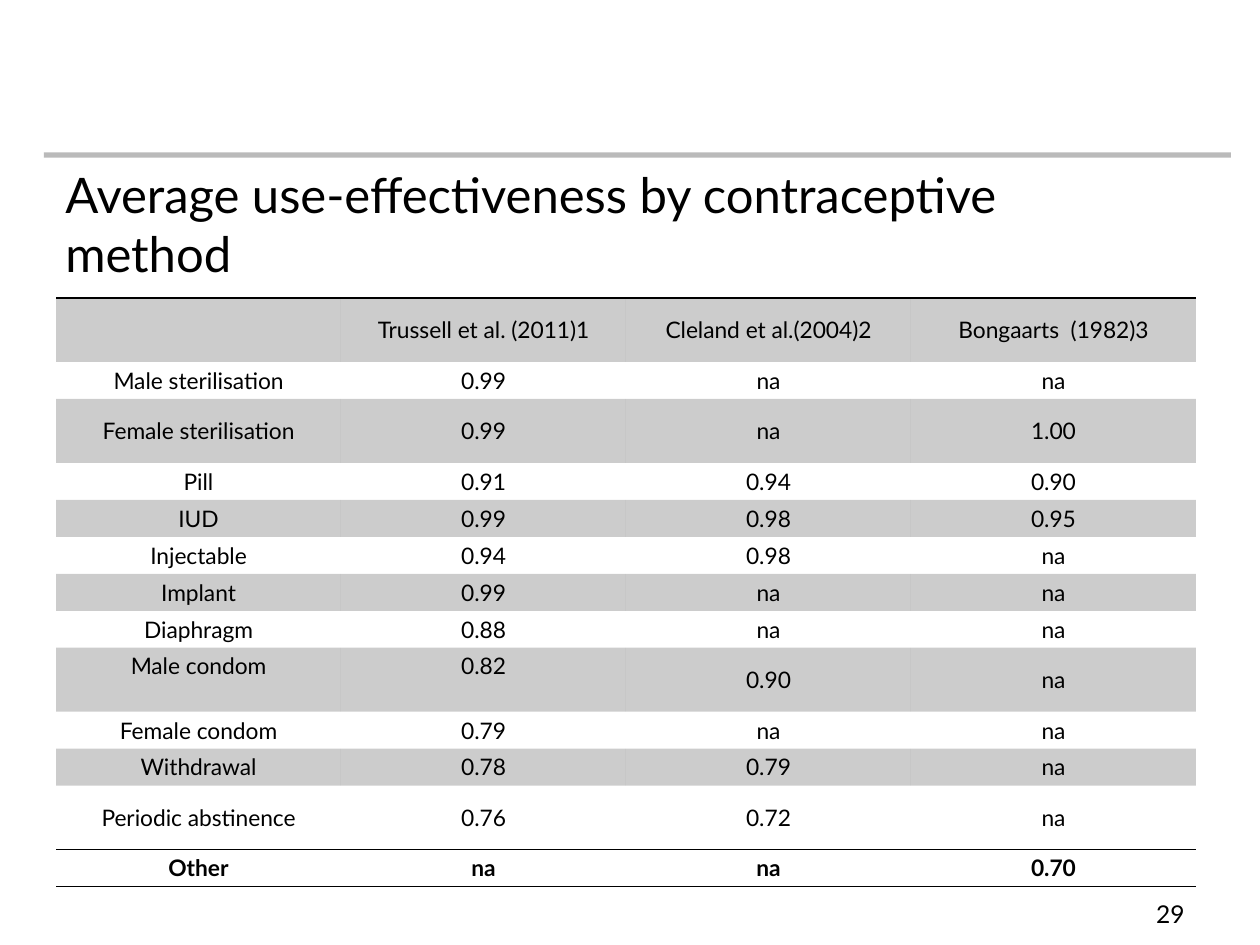
from lxml.etree import SubElement
from pptx import Presentation
from pptx.dml.color import RGBColor
from pptx.enum.shapes import MSO_CONNECTOR as Link
from pptx.enum.text import MSO_ANCHOR as Anchor, PP_ALIGN as Align
from pptx.oxml import parse_xml
from pptx.oxml.ns import nsdecls, qn
from pptx.util import Emu, Pt

BLACK = RGBColor(0x00, 0x00, 0x00)
GREY = RGBColor(0x77, 0x77, 0x77)
FONT = "Lato"
PLAIN = "{2D5ABB26-0587-4C30-8999-92F81FD0307C}"

TITLE = "Average use-effectiveness by contraceptive method"
PAGE = "29"
ROWS = [
    ("", "Trussell et al. (2011)1", "Cleland et al.(2004)2", "Bongaarts  (1982)3"),
    ("Male sterilisation", "0.99", "na", "na"),
    ("Female sterilisation", "0.99", "na", "1.00"),
    ("Pill", "0.91", "0.94", "0.90"),
    ("IUD", "0.99", "0.98", "0.95"),
    ("Injectable", "0.94", "0.98", "na"),
    ("Implant", "0.99", "na", "na"),
    ("Diaphragm", "0.88", "na", "na"),
    ("Male condom", "0.82", "0.90", "na"),
    ("Female condom", "0.79", "na", "na"),
    ("Withdrawal", "0.78", "0.79", "na"),
    ("Periodic abstinence", "0.76", "0.72", "na"),
    ("Other", "na", "na", "0.70"),
]
LAST = len(ROWS) - 1
TALL = {0, 2, 8, 11}
HIGH = {(8, 0), (8, 1)}
EDGES = {0: ["lnT"], LAST: ["lnT", "lnB"]}
COL_W, TALL_H, ROW_H = 285, 64, 37


def px(n):
    return Emu(round(n * 914400 / 126))


def write(frame, text, size, align=Align.LEFT, bold=False):
    par = frame.paragraphs[0]
    par.alignment = align
    run = par.add_run()
    run.text = text
    font = run.font
    font.name, font.size, font.bold = FONT, Pt(size), bold
    font.color.rgb = BLACK


def fade(fill, share):
    color = fill._xPr.find(qn("a:solidFill"))[0]
    SubElement(color, qn("a:alpha"), val=str(share * 1000))


def label(slide, box, text, size, align, anchor):
    frame = slide.shapes.add_textbox(*map(px, box)).text_frame
    frame.word_wrap = True
    frame.vertical_anchor = anchor
    write(frame, text, size, align)


def rule(slide):
    line = slide.shapes.add_connector(Link.STRAIGHT, px(44), px(155), px(1231), px(155))
    line.line.width = Pt(3)
    line.line.color.rgb = GREY
    fade(line.line.fill, 50)
    SubElement(line._element.spPr, qn("a:effectLst"))


def edge(cell, sides):
    props = cell._tc.get_or_add_tcPr()
    for i, side in enumerate(sides):
        props.insert(i, parse_xml(
            f'<a:{side} {nsdecls("a")} w="12700"><a:solidFill>'
            f'<a:srgbClr val="{BLACK}"/></a:solidFill></a:{side}>'))


def grid(slide):
    tall = [TALL_H if r in TALL else ROW_H for r in range(len(ROWS))]
    cols = len(ROWS[0])
    frame = slide.shapes.add_table(
        len(ROWS), cols, px(56), px(298), px(COL_W * cols), px(sum(tall)))
    table = frame.table
    table.first_row = table.horz_banding = False
    table._tbl.tblPr.find(qn("a:tableStyleId")).text = PLAIN
    for col in table.columns:
        col.width = px(COL_W)
    for r, row in enumerate(ROWS):
        table.rows[r].height = px(tall[r])
        for c, text in enumerate(row):
            cell = table.cell(r, c)
            cell.margin_left = cell.margin_right = px(9)
            cell.margin_top = cell.margin_bottom = px(4)
            cell.vertical_anchor = Anchor.TOP if (r, c) in HIGH else Anchor.MIDDLE
            if r % 2 == 0 and r < LAST:
                cell.fill.solid()
                cell.fill.fore_color.rgb = BLACK
                fade(cell.fill, 20)
            else:
                cell.fill.background()
            edge(cell, EDGES.get(r, []))
            if text:
                write(cell.text_frame, text, 13, Align.CENTER, r == LAST)


def main():
    deck = Presentation()
    deck.slide_width, deck.slide_height = px(1260), px(945)
    slide = deck.slides.add_slide(deck.slide_layouts[6])
    rule(slide)
    grid(slide)
    label(slide, (935, 872, 262, 63), PAGE, 14, Align.RIGHT, Anchor.BOTTOM)
    label(slide, (53, 158, 1123, 131), TITLE, 28, Align.LEFT, Anchor.TOP)
    deck.save("out.pptx")


if __name__ == "__main__":
    main()
